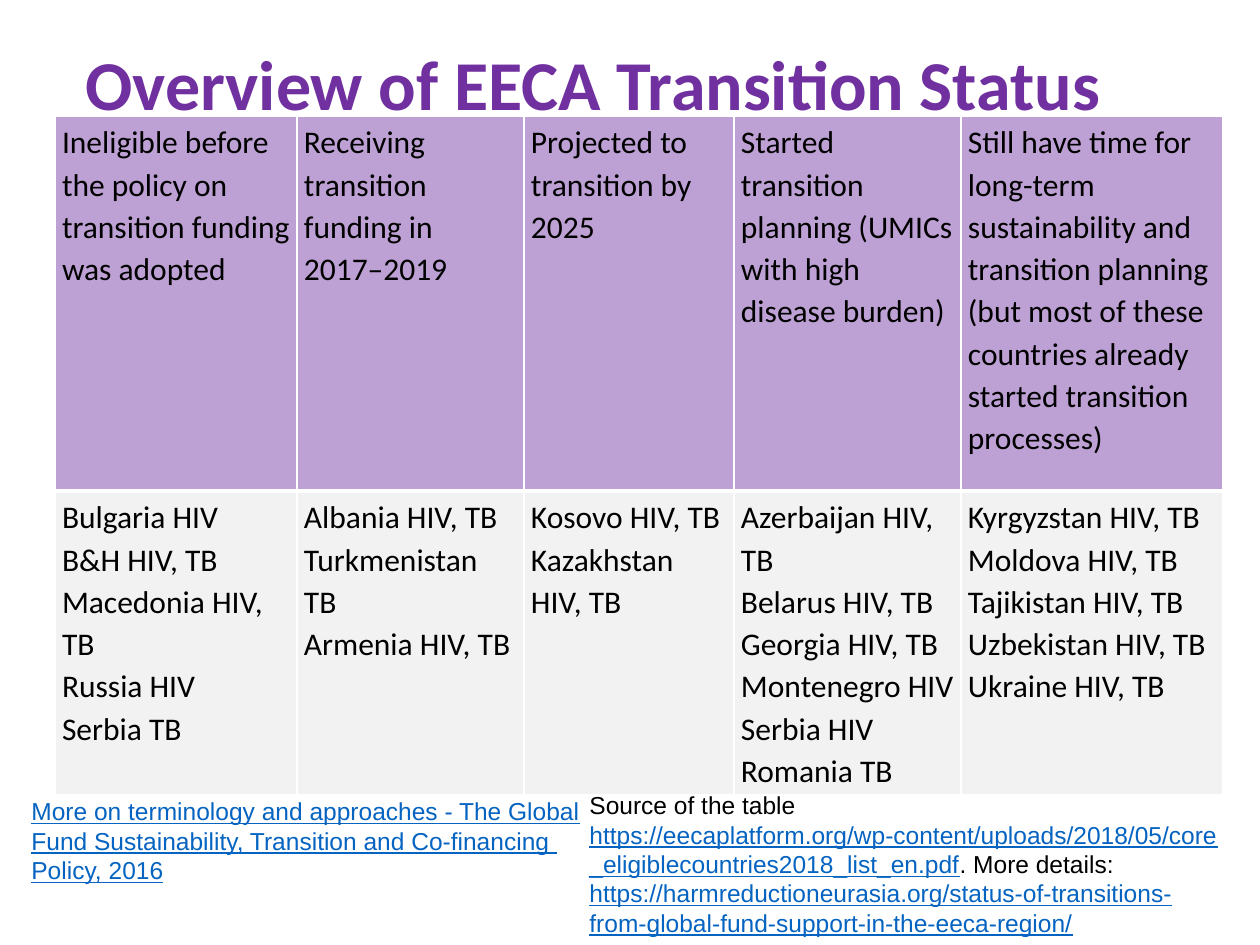
import pptx
import pptx.util
import pptx.dml.color
import pptx.enum.text
import pptx.oxml
import pptx.oxml.ns
from lxml import etree

PX = 914400 / 126
COLORS = {"purple": "7030A0", "grey": "F2F2F2", "white": "FFFFFF",
          "black": "000000", "link": "0563C1"}
TITLE_FONT = {"name": "Calibri", "size": pptx.util.Pt(40), "bold": True}
CELL_FONT = {"name": "Calibri", "size": pptx.util.Pt(18), "bold": False}
NOTE_FONT = {"name": "Arial", "size": pptx.util.Pt(14)}

COLUMN_WIDTHS = [242, 227, 210, 227, 262]
ROW_HEIGHTS = [375, 273]
HEADINGS = [
    "Ineligible before the policy on transition funding was adopted",
    "Receiving transition funding in 2017–2019",
    "Projected to transition by 2025",
    "Started transition planning (UMICs with high disease burden)",
    "Still have time for long-term sustainability and transition planning "
    "(but most of these countries already started transition processes)",
]
COUNTRIES = [
    ["Bulgaria HIV", "B&H HIV, TB Macedonia HIV, TB", "Russia HIV", "Serbia TB"],
    ["Albania HIV, TB Turkmenistan TB", "Armenia HIV, TB"],
    ["Kosovo HIV, TB", "Kazakhstan HIV, TB"],
    ["Azerbaijan HIV, TB", "Belarus HIV, TB Georgia HIV, TB Montenegro HIV",
     "Serbia HIV", "Romania TB"],
    ["Kyrgyzstan HIV, TB Moldova HIV, TB Tajikistan HIV, TB Uzbekistan HIV, TB",
     "Ukraine HIV, TB"],
]
SOURCE_NOTE = [
    ("Source of the table ", False),
    ("https://eecaplatform.org/wp-content/uploads/2018/05/"
     "core_eligiblecountries2018_list_en.pdf", True),
    (". More details: ", False),
    ("https://harmreductioneurasia.org/status-of-transitions-"
     "from-global-fund-support-in-the-eeca-region/", True),
]
POLICY_NOTE = [
    ("More on terminology and approaches - The Global Fund Sustainability, "
     "Transition and Co-financing  Policy, 2016", True),
]


def px(length):
    return pptx.util.Emu(round(length * PX))


def rgb(name):
    return pptx.dml.color.RGBColor.from_string(COLORS[name])


def set_all(target, values):
    for name, value in values.items():
        setattr(target, name, value)


def add_span(para, text, font, color, underline=None):
    span = para.add_run()
    span.text = text
    set_all(span.font, {**font, "underline": underline})
    span.font.color.rgb = rgb(color)


def add_title(page, box, text):
    title = page.shapes.title
    set_all(title, dict(zip(("left", "top", "width", "height"), map(px, box))))
    set_all(title.text_frame, {
        "word_wrap": True,
        "auto_size": pptx.enum.text.MSO_AUTO_SIZE.NONE,
        "vertical_anchor": pptx.enum.text.MSO_ANCHOR.MIDDLE})
    para = title.text_frame.paragraphs[0]
    set_all(para, {"alignment": pptx.enum.text.PP_ALIGN.LEFT, "line_spacing": 0.9})
    add_span(para, text, TITLE_FONT, "purple")


def add_borders(cell, widths):
    """Draw white cell edges; they must come before the fill."""
    properties = cell._tc.get_or_add_tcPr()
    for place, (edge, points) in enumerate(widths.items()):
        line = etree.Element(pptx.oxml.ns.qn(f"a:{edge}"), w=str(pptx.util.Pt(points)))
        fill = etree.SubElement(line, pptx.oxml.ns.qn("a:solidFill"))
        etree.SubElement(fill, pptx.oxml.ns.qn("a:srgbClr"), val=COLORS["white"])
        properties.insert(place, line)


def fill_cell(cell, lines, color, opacity, bottom, top):
    set_all(cell, {"margin_left": px(7), "margin_right": px(7),
                   "margin_top": px(4), "margin_bottom": px(4)})
    cell.fill.solid()
    cell.fill.fore_color.rgb = rgb(color)
    if opacity < 100:
        shade = cell._tc.tcPr.find(".//" + pptx.oxml.ns.qn("a:srgbClr"))
        etree.SubElement(shade, pptx.oxml.ns.qn("a:alpha"), val=str(opacity * 1000))
    add_borders(cell, {"lnL": 1, "lnR": 1, "lnT": top, "lnB": bottom})
    for number, text in enumerate(lines):
        frame = cell.text_frame
        para = frame.add_paragraph() if number else frame.paragraphs[0]
        para.line_spacing = 1.1
        add_span(para, text, CELL_FONT, "black")


def add_status_table(page, left, top):
    box = (left, top, sum(COLUMN_WIDTHS), sum(ROW_HEIGHTS))
    table = page.shapes.add_table(
        len(ROW_HEIGHTS), len(COLUMN_WIDTHS), *map(px, box)).table
    for row, height in zip(table.rows, ROW_HEIGHTS):
        row.height = px(height)
    for index, width in enumerate(COLUMN_WIDTHS):
        table.columns[index].width = px(width)
        fill_cell(table.cell(0, index), [HEADINGS[index]], "purple", 45, 3, 1)
        fill_cell(table.cell(1, index), COUNTRIES[index], "grey", 100, 1, 3)


def add_note(page, box, parts):
    frame = page.shapes.add_textbox(*map(px, box)).text_frame
    frame.word_wrap = True
    frame.auto_size = pptx.enum.text.MSO_AUTO_SIZE.SHAPE_TO_FIT_TEXT
    for text, is_address in parts:
        add_span(frame.paragraphs[0], text, NOTE_FONT,
                 "link" if is_address else "black", is_address)


def main():
    deck = pptx.Presentation()
    deck.slide_width, deck.slide_height = px(1260), px(945)
    page = deck.slides.add_slide(deck.slide_layouts[5])

    # Heading and table
    add_title(page, (73, 32, 1133, 112), "Overview of EECA Transition Status")
    add_status_table(page, 55, 116)

    # Notes under the table
    add_note(page, (577, 784, 664, 190), SOURCE_NOTE)
    add_note(page, (19, 790, 576, 102), POLICY_NOTE)

    deck.save("out.pptx")


if __name__ == "__main__":
    main()
